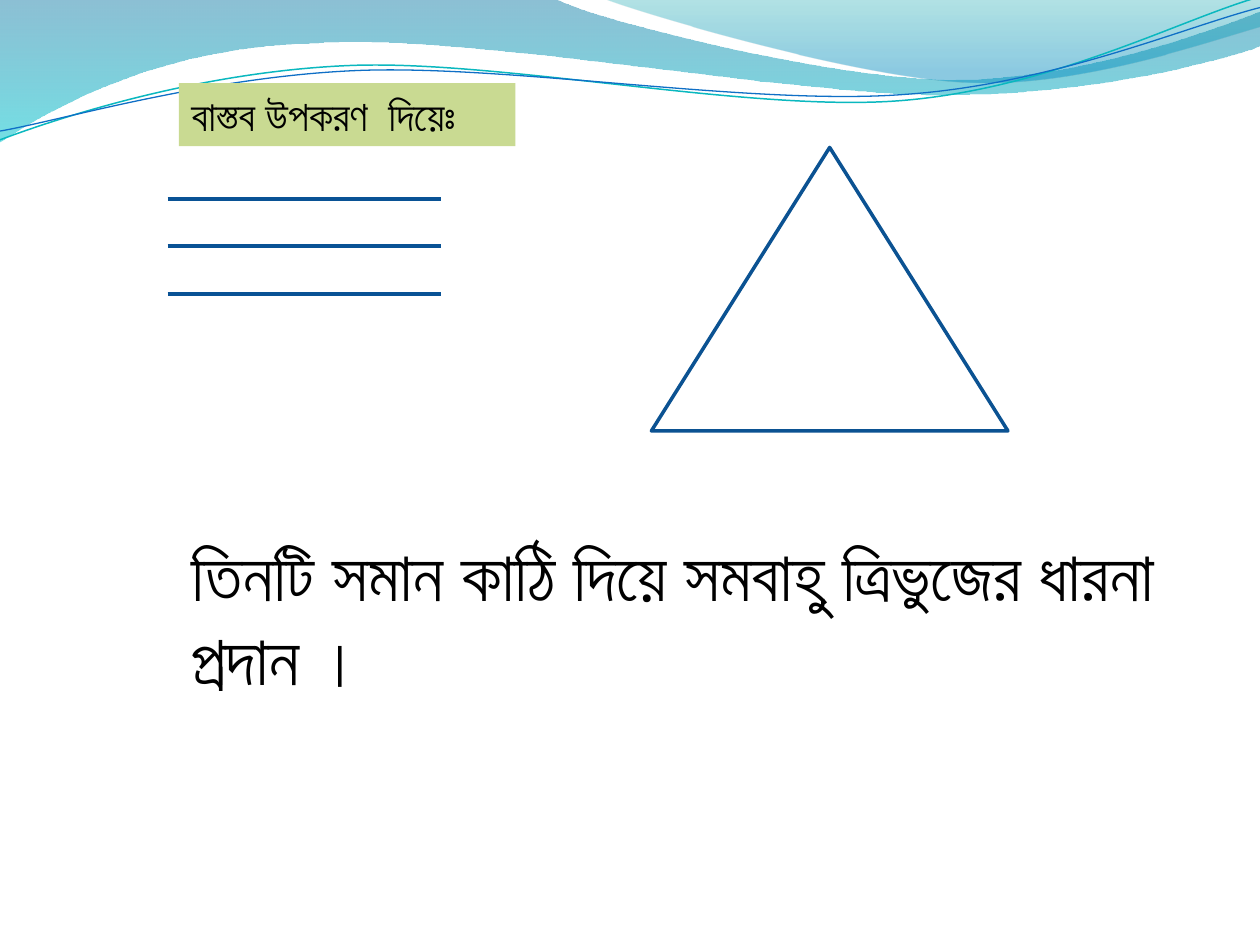
import math

from lxml import etree
from pptx import Presentation, util as u
from pptx.dml.color import RGBColor
from pptx.enum import shapes, text
from pptx.oxml.ns import qn

WIDTH, HEIGHT = 10, 7.5
BLACK = RGBColor(0x00, 0x00, 0x00)
LABEL_GREEN = RGBColor(0xC9, 0xDA, 0x92)
STICK_BLUE = RGBColor(0x09, 0x52, 0x95)
TRIANGLE_BLUE = RGBColor(0x0B, 0x52, 0x92)
TEAL_LINE = RGBColor(0x0A, 0xB8, 0xBF)
BLUE_LINE = RGBColor(0x0F, 0x6F, 0xC6)
DEEP_BLUE = RGBColor(0x00, 0x74, 0xA1)
AQUA = RGBColor(0x00, 0xC6, 0xCF)
TEAL = RGBColor(0x00, 0xA1, 0xA9)
SKY = RGBColor(0x00, 0x8B, 0xBF)

TILT = 357.3
WAVES = [
    dict(start=(0, 0), stops=[(0, DEEP_BLUE, 45), (1, AQUA, 55)], segments=[
        (4.4, -0.01), (4.76, 0.17, 6.64, 0.63, 7.58, 0.63),
        (8.53, 0.63, 9.58, 0.26, 10, 0.09), (10.01, 0.36),
        (9.83, 0.44, 8.7, 0.76, 7.46, 0.75), (6.22, 0.75, 3.82, 0.28, 2.57, 0.34),
        (1.29, 0.36, 0.46, 0.83, -0.01, 1.13), (0, 0)]),
    dict(start=(4.79, -0.01), stops=[(0, TEAL, 30), (0.8, SKY, 45)], segments=[
        (5.09, 0.11, 6.82, 0.62, 7.69, 0.65), (8.56, 0.69, 9.61, 0.32, 10, 0.21),
        (10, 0), (4.79, -0.01)]),
    dict(start=(0, 1.11), line=(TEAL_LINE, 0.85), center=(4.99, 0.575), segments=[
        (0.48, 0.93, 1.58, 0.57, 2.77, 0.52), (3.95, 0.47, 5.93, 0.89, 7.13, 0.8),
        (8.33, 0.71, 9.38, 0.15, 9.98, -0.02)]),
    dict(start=(0, 1.04), line=(BLUE_LINE, 0.75), center=(4.995, 0.59), segments=[
        (0.47, 0.96, 1.64, 0.61, 2.83, 0.56), (4.03, 0.51, 5.97, 0.84, 7.17, 0.75),
        (8.36, 0.67, 9.41, 0.21, 10, 0.06)]),
]
TEXTS = [
    dict(words="তিনটি সমান কাঠি দিয়ে সমবাহু ত্রিভুজের ধারনা প্রদান ।",
         box=(1.42, 4.17, 8, 1.45), size=40, fill=None),
    dict(words="বাস্তব উপকরণ  দিয়েঃ",
         box=(1.42, 0.66, 2.67, 0.5), size=24, fill=LABEL_GREEN),
]
TRIANGLE_BOX = (5.17, 1.17, 2.83, 2.25)
STICK_LEFT, STICK_RIGHT, STICK_TOP, STICK_GAP, STICK_COUNT = 1.33, 3.5, 1.58, 0.375, 3


def inches(values):
    return [u.Inches(value) for value in values]


def set_format(target, **values):
    for name, value in values.items():
        setattr(target, name, value)


def set_line(line, color, width):
    line.color.rgb = color
    line.width = u.Pt(width)


def level(point, center):
    angle = math.radians(360 - TILT)
    x, y = point[0] - center[0], point[1] - center[1]
    return (center[0] + x * math.cos(angle) - y * math.sin(angle),
            center[1] + x * math.sin(angle) + y * math.cos(angle))


def bend(shape, segments):
    path = next(shape.element.iter(qn("a:path")))
    straight = iter(path.findall(qn("a:lnTo")))
    for segment in segments:
        steps = [next(straight) for _ in range(len(segment) // 2)]
        if len(steps) == 3:
            curve = etree.Element(qn("a:cubicBezTo"))
            steps[0].addprevious(curve)
            for step in steps:
                curve.append(step[0])
                path.remove(step)


def add_wave(slide, start, segments, stops=None, line=None, center=None):
    points = [start] + [segment[i:i + 2] for segment in segments
                        for i in range(0, len(segment), 2)]
    if center:
        points = [level(point, center) for point in points]
    points = [inches(point) for point in points]
    builder = slide.shapes.build_freeform(*points[0])
    builder.add_line_segments(points[1:], close=bool(stops))
    shape = builder.convert_to_shape()
    bend(shape, segments)
    shape.shadow.inherit = False
    if line:
        shape.rotation = TILT
        shape.fill.background()
        set_line(shape.line, *line)
        return
    shape.line.fill.background()
    shape.fill.gradient()
    shape.fill.gradient_angle = 270
    for stop, (position, color, _) in zip(shape.fill.gradient_stops, stops):
        stop.position = position
        stop.color.rgb = color
    colors = shape.element.spPr.find(qn("a:gradFill")).iter(qn("a:srgbClr"))
    for color, (_, _, opacity) in zip(colors, stops):
        etree.SubElement(color, qn("a:alpha")).set("val", str(opacity * 1000))


def add_text(slide, words, box, size, fill):
    shape = slide.shapes.add_textbox(*inches(box))
    if fill is not None:
        shape.fill.solid()
        shape.fill.fore_color.rgb = fill
    set_format(shape.text_frame, word_wrap=True,
               auto_size=text.MSO_AUTO_SIZE.SHAPE_TO_FIT_TEXT)
    run = shape.text_frame.paragraphs[0].add_run()
    run.text = words
    set_format(run.font, name="Calibri", size=u.Pt(size))
    run.font.color.rgb = BLACK


def add_triangle(slide):
    triangle = slide.shapes.add_shape(
        shapes.MSO_SHAPE.ISOSCELES_TRIANGLE, *inches(TRIANGLE_BOX))
    triangle.shadow.inherit = False
    triangle.fill.background()
    set_line(triangle.line, TRIANGLE_BLUE, 2)


def add_sticks(slide):
    for row in range(STICK_COUNT):
        y = STICK_TOP + row * STICK_GAP
        stick = slide.shapes.add_connector(
            shapes.MSO_CONNECTOR.STRAIGHT, *inches((STICK_LEFT, y, STICK_RIGHT, y)))
        set_line(stick.line, STICK_BLUE, 2.25)
        etree.SubElement(stick.element.spPr, qn("a:effectLst"))


def main():
    presentation = Presentation()
    set_format(presentation, slide_width=u.Inches(WIDTH), slide_height=u.Inches(HEIGHT))
    slide = presentation.slides.add_slide(presentation.slide_layouts[6])
    for wave in WAVES:
        add_wave(slide, **wave)
    add_triangle(slide)
    add_sticks(slide)
    for item in TEXTS:
        add_text(slide, **item)
    presentation.save("out.pptx")


if __name__ == "__main__":
    main()
